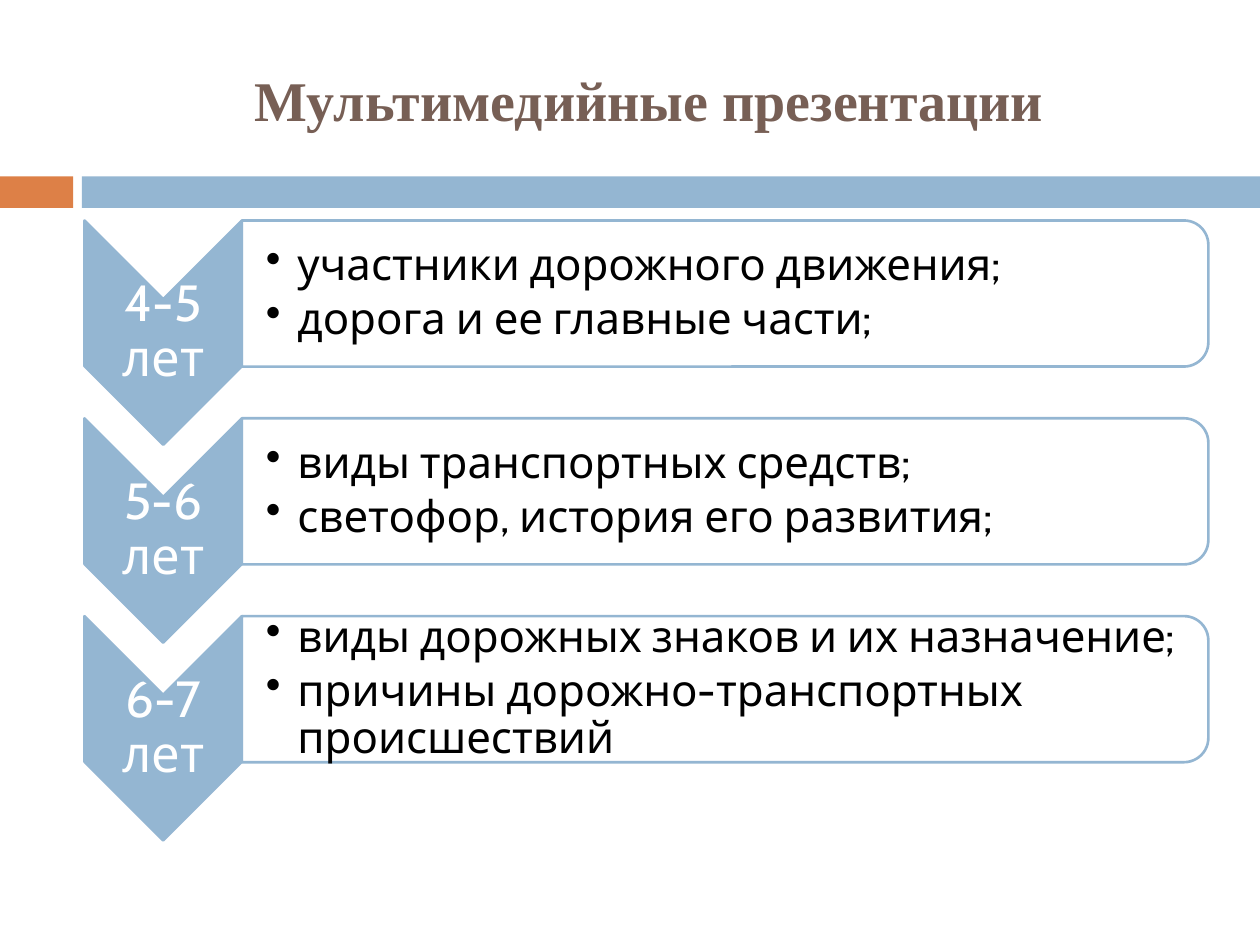
from dataclasses import dataclass
from typing import NamedTuple

import pptx
import pptx.dml.color
import pptx.enum.shapes
import pptx.enum.text
import pptx.oxml.ns
import pptx.util
from lxml import etree

Inches = pptx.util.Inches
Pt = pptx.util.Pt
RGB = pptx.dml.color.RGBColor
MSO = pptx.enum.shapes.MSO_SHAPE
ALIGN = pptx.enum.text.PP_ALIGN
qn = pptx.oxml.ns.qn


@dataclass(frozen=True)
class Theme:
    blue: RGB = RGB(0x94, 0xB6, 0xD2)
    orange: RGB = RGB(0xDD, 0x80, 0x47)
    brown: RGB = RGB(0x77, 0x5F, 0x55)
    white: RGB = RGB(0xFF, 0xFF, 0xFF)
    black: RGB = RGB(0, 0, 0)
    title_font: str = "Times New Roman"
    body_font: str = "Cabin"
    title_size: float = 32
    label_size: float = 29
    item_size: float = 25
    outline: float = 1.5


class Box(NamedTuple):
    left: float
    top: float
    width: float
    height: float


class AgeGroup(NamedTuple):
    label: str
    topics: tuple[str, ...]


THEME = Theme()
GROUPS = (
    AgeGroup("4-5 лет", ("участники дорожного движения;", "дорога и ее главные части;")),
    AgeGroup("5-6 лет", ("виды транспортных средств;", "светофор, история его развития;")),
    AgeGroup("6-7 лет", ("виды дорожных знаков и их назначение;",
                         "причины дорожно-транспортных происшествий")),
)
ROW_TOP, ROW_PITCH = 1.75, 1.57
ROW_LEFT = 0.67
CHEVRON_W, CHEVRON_H = 1.25, 1.78
CARD_W, CARD_H = 7.67, 1.16
LABEL_H = 0.53
INSET = 0.02


def add_filled(slide, kind, box: Box, color: RGB):
    s = slide.shapes.add_shape(kind, *map(Inches, box))
    s.shadow.inherit = False
    s.fill.solid()
    s.fill.fore_color.rgb = color
    s.line.fill.background()
    return s


def add_turned(slide, kind, box: Box, color: RGB):
    """Add an outlined shape turned by 90 degrees so that it covers box."""
    left = box.left + (box.width - box.height) / 2
    top = box.top + (box.height - box.width) / 2
    s = add_filled(slide, kind, Box(left, top, box.height, box.width), color)
    s.rotation = 90
    s.line.color.rgb = THEME.blue
    s.line.width = Pt(THEME.outline)
    return s


def add_text_frame(slide, box: Box, left_inset: float = INSET, inset: float = INSET):
    tf = slide.shapes.add_textbox(*map(Inches, box)).text_frame
    tf.word_wrap = True
    tf.vertical_anchor = pptx.enum.text.MSO_ANCHOR.MIDDLE
    tf.margin_left = Inches(left_inset)
    tf.margin_top = tf.margin_right = tf.margin_bottom = Inches(inset)
    return tf


def add_run(p, text: str, font: str, size: float, color: RGB, bold: bool = False) -> None:
    r = p.add_run()
    r.text = text
    r.font.name = font
    r.font.size = Pt(size)
    r.font.bold = bold
    r.font.color.rgb = color


def set_bullet(p) -> None:
    p_pr = p._p.get_or_add_pPr()
    p_pr.set("marL", str(Inches(0.25)))
    p_pr.set("indent", str(-Inches(0.25)))
    etree.SubElement(p_pr, qn("a:buChar")).set("char", "•")


def add_title(slide, text: str) -> None:
    p = add_text_frame(slide, Box(0.67, 0.25, 8.92, 1.08), 0.1, 0.05).paragraphs[0]
    p.alignment = ALIGN.CENTER
    add_run(p, text, THEME.title_font, THEME.title_size, THEME.brown, bold=True)


def add_age_label(slide, top: float, text: str) -> None:
    add_turned(slide, MSO.CHEVRON, Box(ROW_LEFT, top, CHEVRON_W, CHEVRON_H), THEME.blue)
    box = Box(ROW_LEFT, top + CHEVRON_W / 2, CHEVRON_W, LABEL_H)
    p = add_text_frame(slide, box).paragraphs[0]
    p.alignment = ALIGN.CENTER
    p.line_spacing = 0.9
    p.space_after = Pt(0.35 * THEME.label_size)
    add_run(p, text, THEME.body_font, THEME.label_size, THEME.white)


def add_topic_card(slide, top: float, topics: tuple[str, ...]) -> None:
    left = ROW_LEFT + CHEVRON_W
    card = add_turned(slide, MSO.ROUND_2_SAME_RECTANGLE,
                      Box(left, top, CARD_W, CARD_H), THEME.white)
    fill = card._element.spPr.find(qn("a:solidFill"))
    etree.SubElement(fill[0], qn("a:alpha")).set("val", "90000")

    tf = add_text_frame(slide, Box(left, top + 0.06, CARD_W - 0.06, CARD_H - 0.12), 0.19)
    for i, topic in enumerate(topics):
        p = tf.add_paragraph() if i else tf.paragraphs[0]
        set_bullet(p)
        p.level = 1
        p.alignment = ALIGN.LEFT
        p.line_spacing = 0.9
        p.space_after = Pt(0.15 * THEME.item_size)
        add_run(p, topic, THEME.body_font, THEME.item_size, THEME.black)


def main() -> None:
    prs = pptx.Presentation()
    prs.slide_width, prs.slide_height = Inches(10), Inches(7.5)
    slide = prs.slides.add_slide(prs.slide_layouts[6])

    add_filled(slide, MSO.RECTANGLE, Box(0, 1.4, 0.58, 0.25), THEME.orange)
    add_filled(slide, MSO.RECTANGLE, Box(0.65, 1.4, 9.35, 0.25), THEME.blue)
    add_title(slide, "Мультимедийные презентации")
    for i, group in enumerate(GROUPS):
        top = ROW_TOP + i * ROW_PITCH
        add_age_label(slide, top, group.label)
        add_topic_card(slide, top, group.topics)

    prs.save("out.pptx")


if __name__ == "__main__":
    main()
